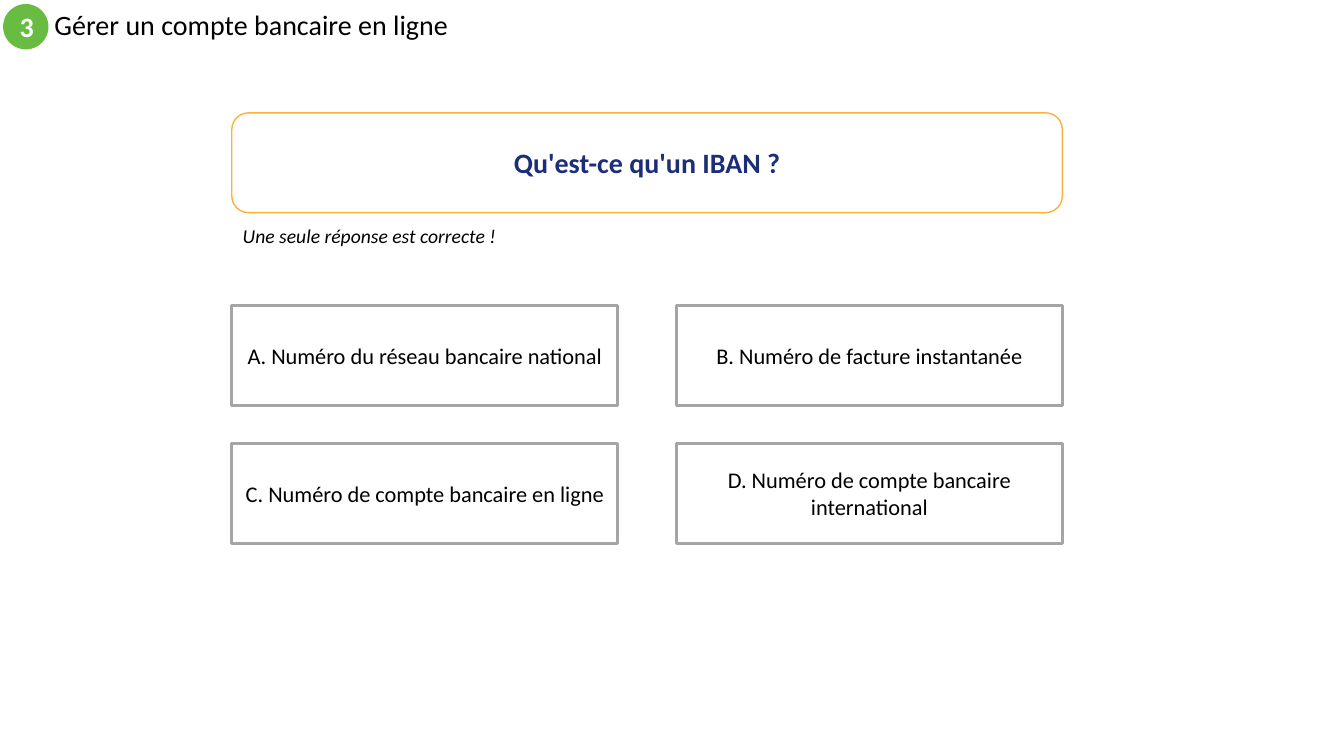
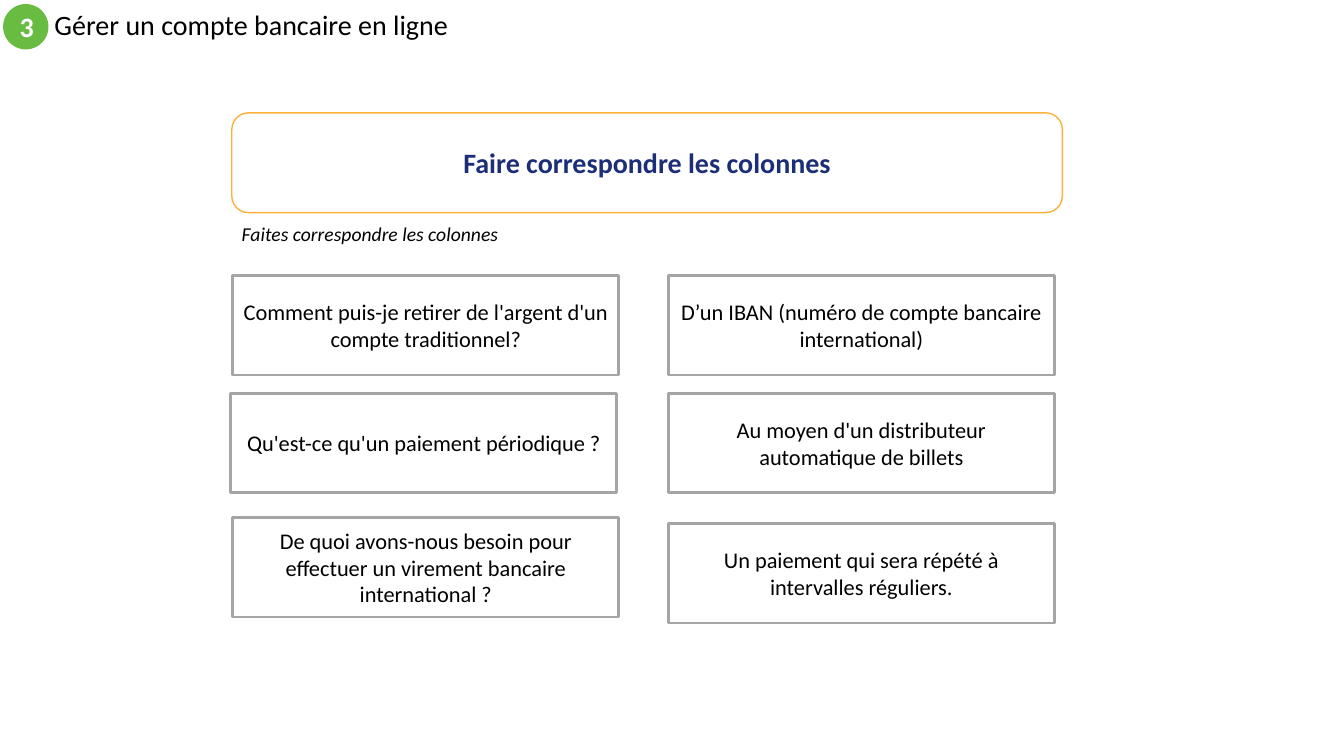
"""Build two quiz slides on managing a bank account online."""
import pptx
import pptx.dml.color
import pptx.enum.shapes
import pptx.enum.text
import pptx.util

Pt = pptx.util.Pt
Kind = pptx.enum.shapes.MSO_SHAPE
Align = pptx.enum.text.PP_ALIGN
Mid = pptx.enum.text.MSO_ANCHOR.MIDDLE
Top = pptx.enum.text.MSO_ANCHOR.TOP

HUES = {"green": "68BC42", "gold": "FCB13A", "navy": "1C2E78",
        "gray": "A5A5A5", "white": "FFFFFF", "black": "000000"}
TALL = 71.3
WIDE = 275.8

QUIZ = [
    ("Qu'est-ce qu'un IBAN ?",
     "Une seule réponse est correcte !", 166.3, 156.2,
     [(165.6, 218.2, "A. Numéro du réseau bancaire national"),
      (483.1, 218.2, "B. Numéro de facture instantanée"),
      (165.6, 316.8, "C. Numéro de compte bancaire en ligne"),
      (483.1, 316.8, "D. Numéro de compte bancaire international")]),
    ("Faire correspondre les colonnes",
     "Faites correspondre les colonnes", 165.6, 154.8,
     [(166.3, 196.6, "Comment puis-je retirer de l'argent d'un compte traditionnel?"),
      (477.4, 196.6, "D’un IBAN (numéro de compte bancaire international)"),
      (164.9, 280.8, "Qu'est-ce qu'un paiement périodique ?"),
      (477.4, 280.8, "Au moyen d'un distributeur automatique de billets"),
      (166.3, 369.4, "De quoi avons-nous besoin pour effectuer un virement bancaire international ?"),
      (477.4, 373.7, "Un paiement qui sera répété à intervalles réguliers.")]),
]


def write(shape, text, size, hue="black", bold=False, slant=False,
          align=Align.CENTER, anchor=Mid):
    """Put one styled run in a shape and return its paragraph."""
    frame = shape.text_frame
    frame.word_wrap = True
    frame.auto_size = pptx.enum.text.MSO_AUTO_SIZE.NONE
    frame.vertical_anchor = anchor
    para = frame.paragraphs[0]
    para.alignment = align
    run = para.add_run()
    run.text = text
    font = run.font
    font.name = "Calibri"
    font.size = Pt(size)
    font.bold = bold
    font.italic = slant
    font.color.rgb = pptx.dml.color.RGBColor.from_string(HUES[hue])
    return para


def draw(slide, kind, left, top, width, height, fill, line=None, weight=1):
    """Add a flat filled shape, outlined when a line hue is given."""
    shape = slide.shapes.add_shape(kind, Pt(left), Pt(top), Pt(width), Pt(height))
    shape.shadow.inherit = False
    shape.fill.solid()
    shape.fill.fore_color.rgb = pptx.dml.color.RGBColor.from_string(HUES[fill])
    if line:
        shape.line.color.rgb = pptx.dml.color.RGBColor.from_string(HUES[line])
        shape.line.width = Pt(weight)
    else:
        shape.line.fill.background()
    return shape


deck = pptx.Presentation()
deck.slide_width = Pt(960)
deck.slide_height = Pt(540)
base = deck.slide_layouts[5]
head = base.placeholders[0]
head.left, head.top, head.width, head.height = Pt(31.7), Pt(2.9), Pt(576), Pt(32.4)

for theme, hint, left, top, cards in QUIZ:
    slide = deck.slides.add_slide(base)
    para = write(slide.shapes.title, "Gérer un compte bancaire en ligne", 20,
                 align=Align.LEFT)
    para.line_spacing = 0.9

    badge = draw(slide, Kind.OVAL, 2.2, 2.9, 32.4, 32.4, "green")
    write(badge, "3", 20, "white", bold=True)

    panel = draw(slide, Kind.ROUNDED_RECTANGLE, 165.6, 80.6, 593.3, TALL,
                 "white", "gold")
    write(panel, theme, 20, "navy", bold=True)

    note = slide.shapes.add_textbox(Pt(left), Pt(top), Pt(283.7), Pt(24.5))
    write(note, hint, 14, slant=True, align=Align.LEFT, anchor=Top)

    for left, top, text in cards:
        card = draw(slide, Kind.RECTANGLE, left, top, WIDE, TALL,
                    "white", "gray", 2)
        write(card, text, 16)

deck.save("out.pptx")
